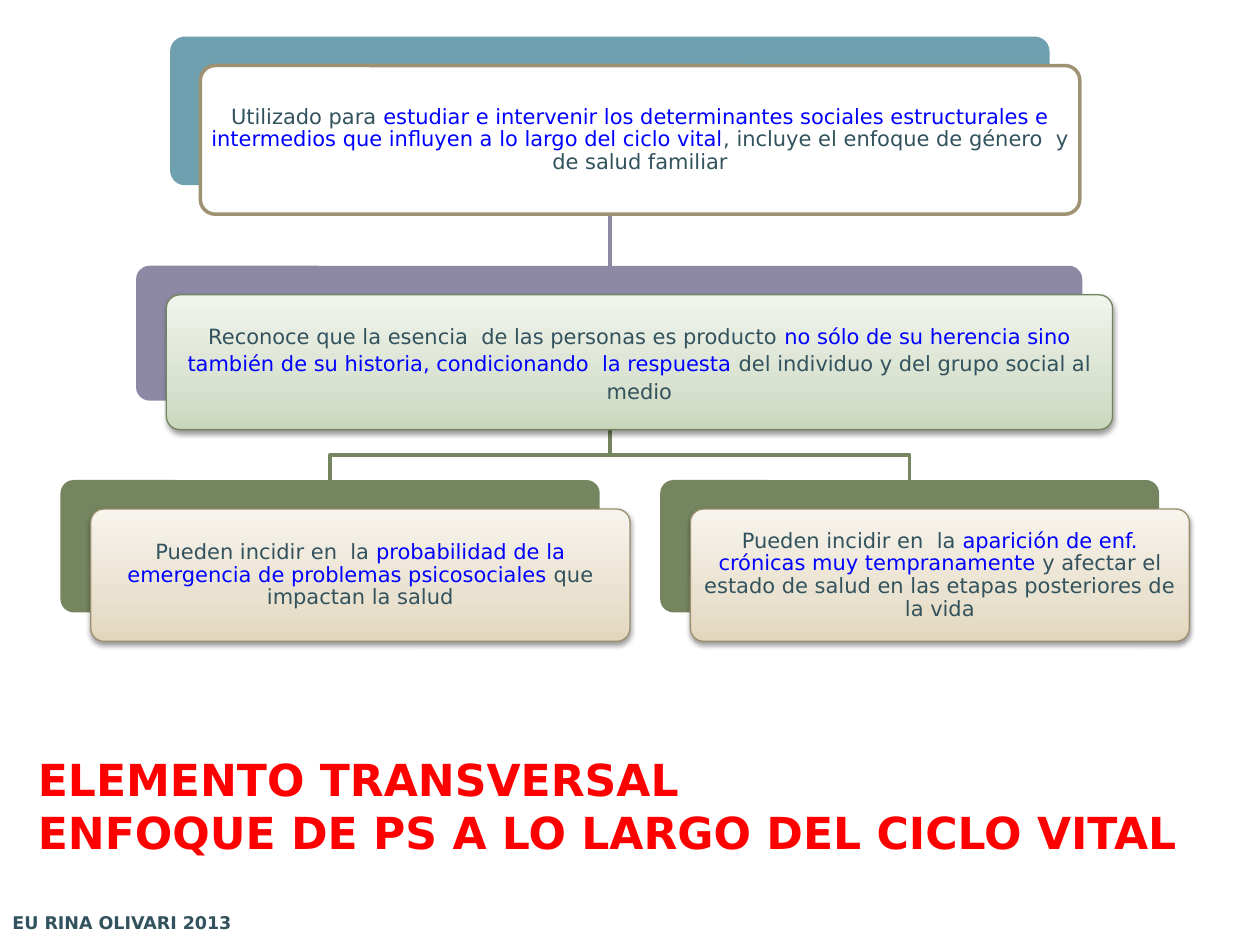
from dataclasses import dataclass
from lxml.etree import SubElement
from pptx import Presentation
from pptx.dml.color import RGBColor
from pptx.enum.shapes import MSO_CONNECTOR, MSO_SHAPE
from pptx.enum.text import MSO_ANCHOR, PP_ALIGN
from pptx.oxml.ns import qn
from pptx.util import Inches, Pt


@dataclass(frozen=True)
class Theme:
    font: str = "DejaVu Sans"
    body: float = 12
    head: float = 25.2
    foot: float = 10
    ink: str = "32525D"
    key: str = "0000FF"
    red: str = "FF0000"
    white: str = "FFFFFF"
    teal: str = "6EA0B0"
    mauve: str = "8D89A4"
    olive: str = "748560"
    tan: str = "9E9273"
    green: tuple = ("C9D7BC", "D9E2D0", "F1F4ED")
    sand: tuple = ("E2D7BD", "EAE2D0", "F7F4ED")
    moss: str = "72835D"
    clay: str = "9C8F6F"


def rgb(code):
    return RGBColor.from_string(code)


def write(frame, runs, *, font, size, bold=False, align=PP_ALIGN.LEFT,
          space=None, inset=None):
    """Fill a text frame with one paragraph of (text, colour) runs."""
    frame.word_wrap = True
    frame.vertical_anchor = MSO_ANCHOR.MIDDLE
    if inset is not None:
        frame.margin_left = frame.margin_right = Inches(inset)
        frame.margin_top = frame.margin_bottom = Inches(inset)
    para = frame.paragraphs[0]
    para.alignment = align
    if space is not None:
        para.line_spacing = space
    for index, (words, color) in enumerate(runs):
        first, *rest = words.split("\n")
        parts = [first] + rest
        for count, part in enumerate(parts):
            if count:
                para.add_line_break()
            run = para.add_run()
            run.text = part
            run.font.name = font
            run.font.size = Pt(size)
            run.font.bold = bold
            run.font.color.rgb = rgb(color)


class Deck:
    def __init__(self, theme):
        self.theme = theme
        self.file = Presentation()
        self.file.slide_width, self.file.slide_height = Inches(10), Inches(7.5)
        self.slide = self.file.slides.add_slide(self.file.slide_layouts[5])

    def title(self, words, box):
        shape = self.slide.shapes.title
        shape.left, shape.top, shape.width, shape.height = map(Inches, box)
        write(shape.text_frame, [(words, self.theme.red)], bold=True,
              font=self.theme.font, size=self.theme.head)

    def shape(self, kind, box, fill, line=None, width=0.75):
        item = self.slide.shapes.add_shape(kind, *map(Inches, box))
        item.shadow.inherit = False
        if kind == MSO_SHAPE.ROUNDED_RECTANGLE:
            item.adjustments[0] = 0.1
        if isinstance(fill, tuple):
            self.blend(item, fill)
        else:
            item.fill.solid()
            item.fill.fore_color.rgb = rgb(fill)
        if line:
            item.line.color.rgb = rgb(line)
            item.line.width = Pt(width)
        else:
            item.line.fill.background()
        return item

    def blend(self, item, colors):
        """Three-stop gradient rising from the bottom, with a soft shadow."""
        item.fill.gradient()
        item.fill.gradient_angle = 90
        props = item.element.spPr
        stops = props.find(".//" + qn("a:gsLst"))
        stops[:] = []
        for place, color in zip((0, 35, 100), colors):
            stop = SubElement(stops, qn("a:gs"), pos=str(place * 1000))
            SubElement(stop, qn("a:srgbClr"), val=color)
        shade = SubElement(props.find(qn("a:effectLst")), qn("a:outerShdw"),
                           blurRad=str(Pt(3.1)), dist=str(Pt(1.6)),
                           dir="5400000", rotWithShape="0")
        black = SubElement(shade, qn("a:srgbClr"), val="000000")
        SubElement(black, qn("a:alpha"), val="38000")

    def card(self, box, back, fill, line, runs, width=0.75, space=0.9):
        """Plain back plate plus a shifted front plate holding the text."""
        left, top, wide, high = box
        kind = MSO_SHAPE.ROUNDED_RECTANGLE
        self.shape(kind, box, back)
        front = self.shape(kind, (left + 0.24, top + 0.23, wide, high),
                           fill, line, width)
        write(front.text_frame, runs, font=self.theme.font,
              size=self.theme.body, align=PP_ALIGN.CENTER, space=space,
              inset=0.02)

    def stem(self, x, top, end, color):
        link = self.slide.shapes.add_connector(
            MSO_CONNECTOR.STRAIGHT, *map(Inches, (x, top, x, end)))
        link.line.color.rgb = rgb(color)
        link.line.width = Pt(2)
        SubElement(link.element.spPr, qn("a:effectLst"))

    def branch(self, points, color):
        start, *rest = [tuple(map(Inches, point)) for point in points]
        path = self.slide.shapes.build_freeform(*start)
        path.add_line_segments(rest, close=False)
        item = path.convert_to_shape()
        item.shadow.inherit = False
        item.fill.background()
        item.line.color.rgb = rgb(color)
        item.line.width = Pt(2)

    def footer(self, words, box):
        item = self.shape(MSO_SHAPE.RECTANGLE, box, self.theme.white)
        tint = item.element.spPr.find(qn("a:solidFill"))[0]
        SubElement(tint, qn("a:alpha"), val="33000")
        write(item.text_frame, [(words, self.theme.ink)], bold=True,
              font=self.theme.font, size=self.theme.foot)


def main():
    look = Theme()
    deck = Deck(look)
    ink, key = look.ink, look.key

    # Links between the levels
    axis = 4.84
    for end in (7.22, 2.62):
        deck.branch([(axis, 3.18), (axis, 3.61), (end, 3.61), (end, 3.81)],
                    look.olive)
    deck.stem(axis, 1.47, 2.11, look.mauve)

    # Purpose
    deck.card((1.35, 0.29, 6.98, 1.18), look.teal, look.white, look.tan, [
        ("Utilizado para ", ink),
        ("estudiar e intervenir los determinantes sociales estructurales e "
         "intermedios que influyen a lo largo del ciclo vital", key),
        (", incluye el enfoque de género  y de salud familiar", ink),
    ], width=2)

    # Principle
    deck.card((1.08, 2.11, 7.51, 1.07), look.mauve, look.green, look.moss, [
        ("Reconoce que la esencia  de las personas es producto ", ink),
        ("no sólo de su herencia sino también de su historia, "
         "condicionando  la respuesta ", key),
        ("del individuo y del grupo social al medio", ink),
    ], space=Pt(16))

    # Effects
    effects = [
        (0.48, 4.28, "probabilidad de la emergencia de problemas psicosociales ",
         "que impactan la salud"),
        (5.24, 3.96, "aparición de enf. crónicas muy tempranamente ",
         "y afectar el estado de salud en las etapas posteriores de la vida"),
    ]
    for left, wide, focus, tail in effects:
        deck.card((left, 3.81, wide, 1.05), look.olive, look.sand, look.clay, [
            ("Pueden incidir en  la ", ink), (focus, key), (tail, ink)])

    # Title and author
    deck.title("ELEMENTO TRANSVERSAL \nENFOQUE DE PS A LO LARGO DEL CICLO VITAL",
               (0.2, 5.88, 9.53, 1.02))
    deck.footer("EU RINA OLIVARI 2013", (0, 7.14, 3.11, 0.36))
    deck.file.save("out.pptx")


if __name__ == "__main__":
    main()
